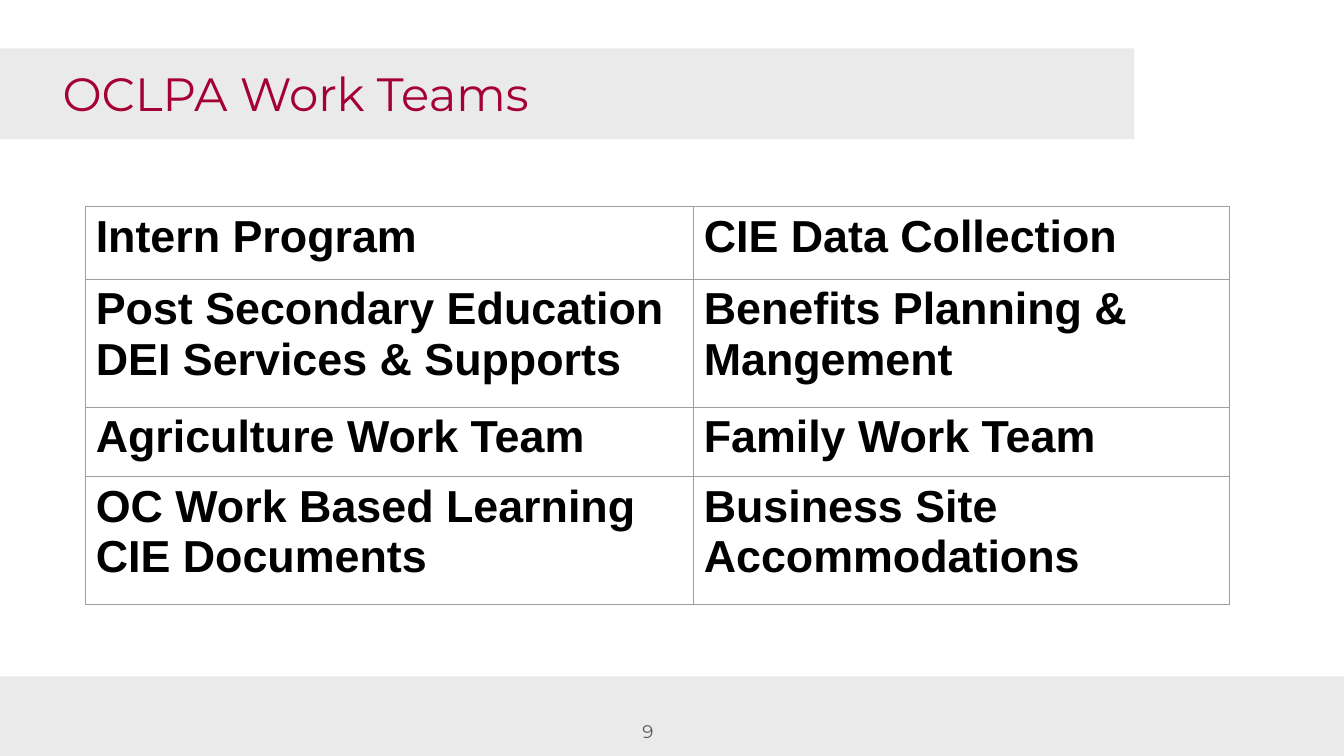
import pptx
import pptx.util
import pptx.dml.color
import pptx.enum.shapes
import pptx.enum.text
import pptx.oxml
import pptx.oxml.ns
from pptx.util import Inches

TITLE = "OCLPA Work Teams"
PAGE_NUMBER = "9"
WORK_TEAMS = [
    ("Intern Program", "CIE Data Collection"),
    ("Post Secondary Education DEI Services & Supports", "Benefits Planning & Mangement"),
    ("Agriculture Work Team", "Family Work Team"),
    ("OC Work Based Learning CIE Documents", "Business Site Accommodations"),
]
COLUMN_WIDTHS = (6.03, 5.31)
ROW_HEIGHTS = (0.72, 1.27, 0.69, 1.27)
FOOTER_BAND = (-0.03, 6.71, 13.38, 0.87)
TITLE_BAND = (-0.11, 0.48, 11.36, 0.9)

BAND_GRAY = pptx.dml.color.RGBColor(0xEA, 0xEA, 0xEA)
CRIMSON = pptx.dml.color.RGBColor(0xA5, 0x00, 0x34)
NUMBER_GRAY = pptx.dml.color.RGBColor(0x59, 0x59, 0x59)
BLACK = pptx.dml.color.RGBColor(0, 0, 0)
BORDER_GRAY = pptx.dml.color.RGBColor(0x9E, 0x9E, 0x9E)


def write(frame, text, font, size, color, align, bold=False):
    paragraph = frame.paragraphs[0]
    paragraph.alignment = align
    run = paragraph.add_run()
    run.text = text
    run.font.name = font
    run.font.size = pptx.util.Pt(size)
    run.font.bold = bold
    run.font.color.rgb = color


def add_borders(cell):
    properties = cell._tc.get_or_add_tcPr()
    for position, side in enumerate(("lnL", "lnR", "lnT", "lnB")):
        border = pptx.oxml.parse_xml(
            f'<a:{side} {pptx.oxml.ns.nsdecls("a")} w="{pptx.util.Pt(0.75)}">'
            f'<a:solidFill><a:srgbClr val="{BORDER_GRAY}"/></a:solidFill></a:{side}>'
        )
        properties.insert(position, border)


def main():
    deck = pptx.Presentation()
    deck.slide_width, deck.slide_height = Inches(13.33), Inches(7.5)
    slide = deck.slides.add_slide(deck.slide_layouts[5])
    shapes = slide.shapes
    left = pptx.enum.text.PP_ALIGN.LEFT

    for depth, place in enumerate((FOOTER_BAND, TITLE_BAND)):
        band = shapes.add_shape(pptx.enum.shapes.MSO_SHAPE.RECTANGLE, *map(Inches, place))
        band.shadow.inherit = False
        band.fill.solid()
        band.fill.fore_color.rgb = BAND_GRAY
        band.line.fill.background()
        shapes._spTree.insert(2 + depth, band._element)

    title = shapes.title
    title.left, title.top, title.width, title.height = map(Inches, (0.49, 0.51, 10.69, 0.72))
    frame = title.text_frame
    frame.margin_left = frame.margin_right = frame.margin_top = frame.margin_bottom = Inches(0.13)
    frame.vertical_anchor = pptx.enum.text.MSO_ANCHOR.TOP
    frame.auto_size = pptx.enum.text.MSO_AUTO_SIZE.NONE
    write(frame, TITLE, "Montserrat", 33.3, CRIMSON, left)

    number = shapes.add_textbox(*map(Inches, (6, 7.05, 0.85, 0.4))).text_frame
    number.word_wrap = True
    number.vertical_anchor = pptx.enum.text.MSO_ANCHOR.MIDDLE
    write(number, PAGE_NUMBER, "Montserrat", 13, NUMBER_GRAY, pptx.enum.text.PP_ALIGN.CENTER)

    teams = shapes.add_table(
        len(WORK_TEAMS), len(COLUMN_WIDTHS), Inches(0.85), Inches(2.05),
        Inches(sum(COLUMN_WIDTHS)), Inches(sum(ROW_HEIGHTS)),
    ).table
    teams.first_row = teams.horz_banding = False
    for column, width in zip(teams.columns, COLUMN_WIDTHS):
        column.width = Inches(width)
    for row, height, names in zip(teams.rows, ROW_HEIGHTS, WORK_TEAMS):
        row.height = Inches(height)
        for cell, name in zip(row.cells, names):
            cell.fill.background()
            add_borders(cell)
            write(cell.text_frame, name, "Arial", 32, BLACK, left, bold=True)

    deck.save("out.pptx")


if __name__ == "__main__":
    main()
